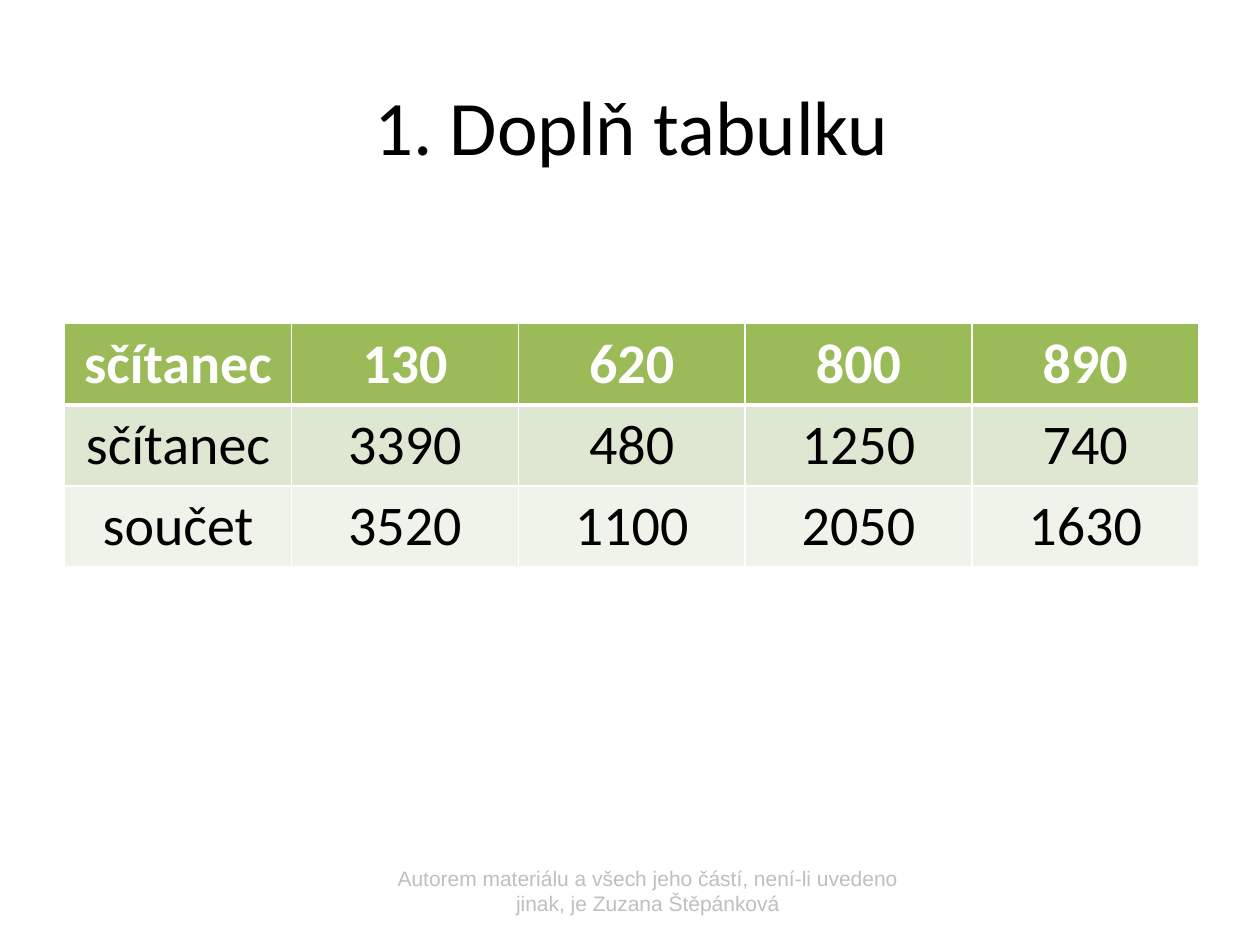
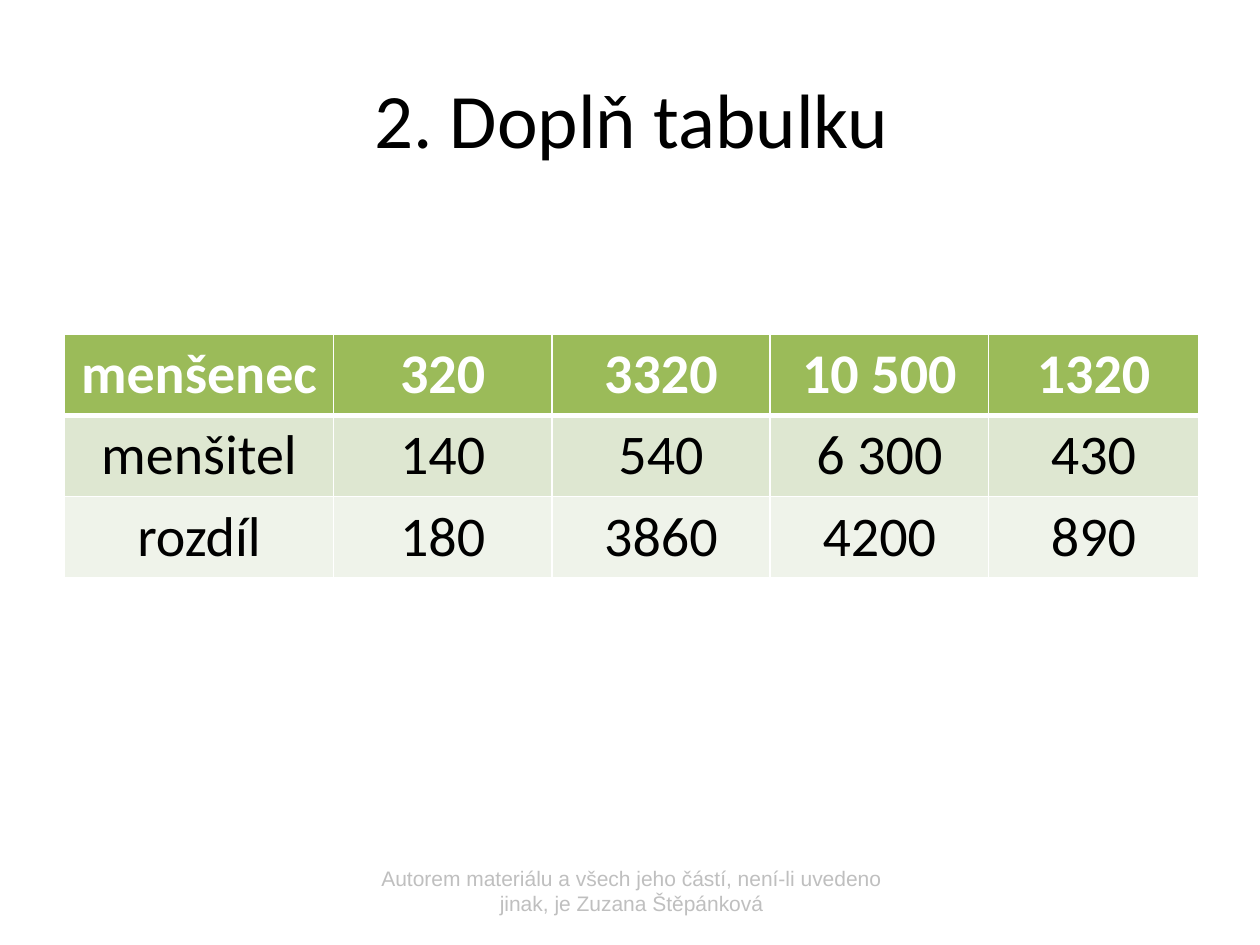
from dataclasses import dataclass

from lxml import etree
from pptx import Presentation
from pptx import util as u
from pptx.dml import color
from pptx.enum import text
from pptx.oxml import ns


@dataclass(frozen=True)
class Theme:
    heading_font: str = "Calibri"
    footer_font: str = "Arial"
    title_size: int = 44
    table_size: int = 32
    footer_size: int = 12
    ink: str = "000000"
    paper: str = "FFFFFF"
    header_fill: str = "9BBB59"
    band_fills: tuple = ("DEE7D1", "EFF3EA")
    footer_ink: str = "BFBFBF"
    thin_line: int = 1
    header_line: int = 3


LEFT, WIDTH = 37, 648
ROW_HEIGHT = 45.6
FOOTER = ("Autorem materiálu a všech jeho částí, není-li uvedeno jinak, "
          "je Zuzana Štěpánková")


class Worksheet:
    """Holds the theme and the slide being built."""

    def __init__(self, theme):
        self.theme = theme
        self.presentation = Presentation()
        self.presentation.slide_width = u.Pt(720)
        self.presentation.slide_height = u.Pt(540)
        self.slide = None

    def add_slide(self):
        title_only = self.presentation.slide_layouts[5]
        self.slide = self.presentation.slides.add_slide(title_only)

    def set_text(self, frame, wording, font_name, size, ink, bold=False):
        frame.text = wording
        paragraph = frame.paragraphs[0]
        paragraph.alignment = text.PP_ALIGN.CENTER
        font = paragraph.font
        font.name, font.size, font.bold = font_name, u.Pt(size), bold
        font.color.rgb = color.RGBColor.from_string(ink)

    def title(self, wording, top, anchor):
        shape = self.slide.shapes.title
        shape.left, shape.top = u.Pt(LEFT), u.Pt(top)
        shape.width, shape.height = u.Pt(WIDTH), u.Pt(90)
        frame = shape.text_frame
        frame.auto_size = text.MSO_AUTO_SIZE.NONE
        frame.vertical_anchor = anchor
        self.set_text(frame, wording, self.theme.heading_font,
                      self.theme.title_size, self.theme.ink)

    def borders(self, cell, top, bottom):
        properties = cell._tc.get_or_add_tcPr()
        thin = self.theme.thin_line
        for side, width in (("L", thin), ("R", thin), ("T", top), ("B", bottom)):
            line = etree.SubElement(properties, ns.qn(f"a:ln{side}"),
                                    w=str(u.Pt(width)))
            fill = etree.SubElement(line, ns.qn("a:solidFill"))
            etree.SubElement(fill, ns.qn("a:srgbClr"), val=self.theme.paper)

    def table(self, rows, top, column_widths):
        theme = self.theme
        table = self.slide.shapes.add_table(
            len(rows), len(column_widths), u.Pt(LEFT), u.Pt(top),
            u.Pt(WIDTH), u.Pt(ROW_HEIGHT * len(rows))).table
        for column, width in zip(table.columns, column_widths):
            column.width = u.Pt(width)
        for row_index, values in enumerate(rows):
            header = row_index == 0
            fill = theme.header_fill if header else theme.band_fills[(row_index - 1) % 2]
            ink = theme.paper if header else theme.ink
            # The heavy rule lies between the header and the first band
            top_line = theme.header_line if row_index == 1 else theme.thin_line
            bottom_line = theme.header_line if header else theme.thin_line
            for column_index, value in enumerate(values):
                cell = table.cell(row_index, column_index)
                self.borders(cell, top_line, bottom_line)
                cell.fill.solid()
                cell.fill.fore_color.rgb = color.RGBColor.from_string(fill)
                self.set_text(cell.text_frame, value, theme.heading_font,
                              theme.table_size, ink, bold=header)

    def footer(self, left, width):
        shape = self.slide.shapes.add_textbox(
            u.Pt(left), u.Pt(491), u.Pt(width), u.Pt(36))
        frame = shape.text_frame
        frame.word_wrap = True
        frame.auto_size = text.MSO_AUTO_SIZE.SHAPE_TO_FIT_TEXT
        self.set_text(frame, FOOTER, self.theme.footer_font,
                      self.theme.footer_size, self.theme.footer_ink)


def main():
    sheet = Worksheet(Theme())

    # Addition
    sheet.add_slide()
    sheet.title("1. Doplň tabulku", 26, text.MSO_ANCHOR.MIDDLE)
    sheet.table([
        ("sčítanec", "130", "620", "800", "890"),
        ("sčítanec", "3390", "480", "1250", "740"),
        ("součet", "3520", "1100", "2050", "1630"),
    ], 185, [WIDTH / 5] * 5)
    sheet.footer(206.5, 327.5)

    # Subtraction
    sheet.add_slide()
    sheet.title("2. Doplň tabulku", 37.5, text.MSO_ANCHOR.TOP)
    sheet.table([
        ("menšenec", "320", "3320", "10 500", "1320"),
        ("menšitel", "140", "540", "6 300", "430"),
        ("rozdíl", "180", "3860", "4200", "890"),
    ], 191, [153.6, 124.8, 124.8, 124.8, 120])
    sheet.footer(203, 316)

    sheet.presentation.save("out.pptx")


if __name__ == "__main__":
    main()
